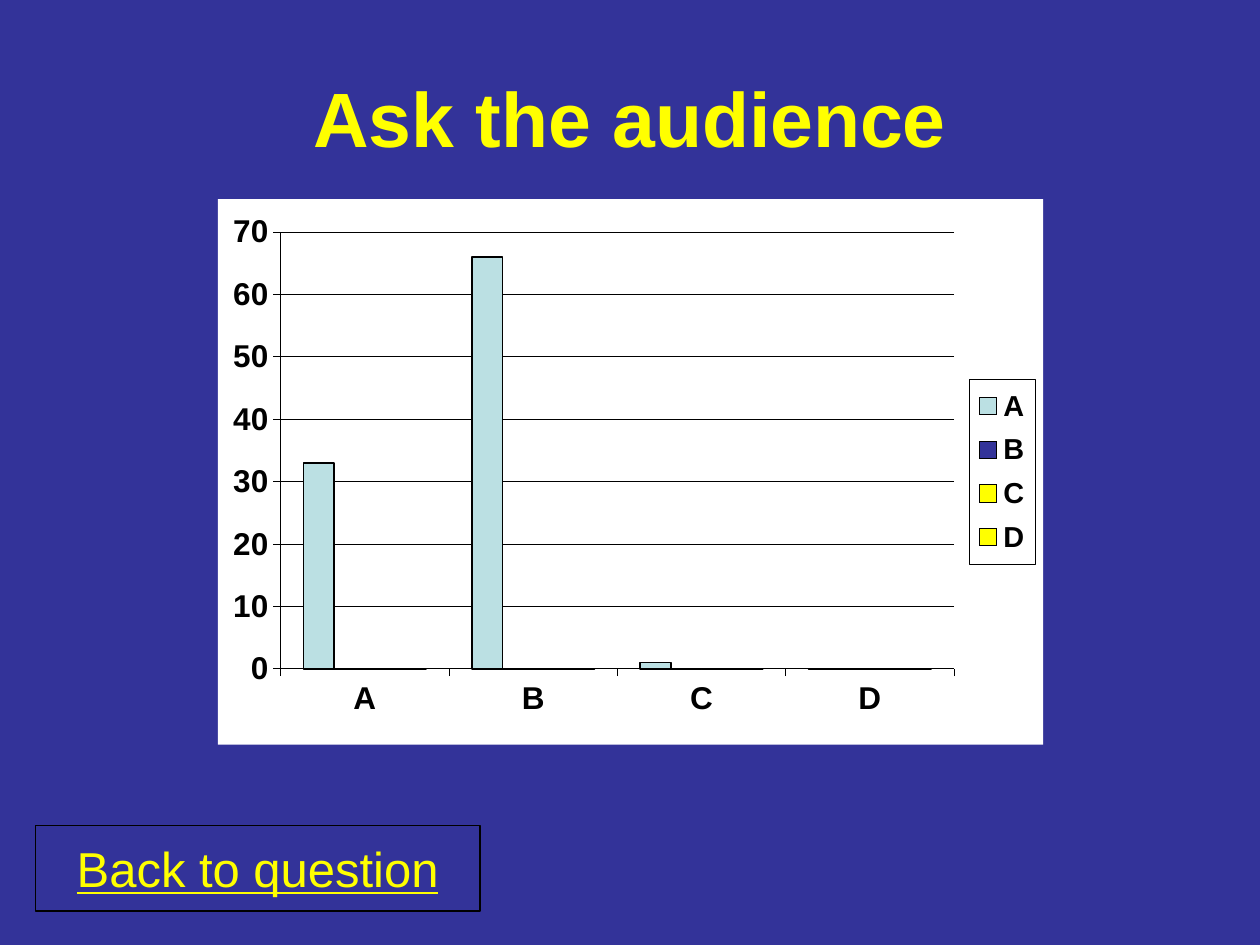
import dataclasses

import pptx
import pptx.chart.axis
import pptx.chart.chart
import pptx.chart.data
import pptx.dml.color
import pptx.enum.chart
import pptx.enum.shapes
import pptx.enum.text
import pptx.oxml
import pptx.oxml.ns
import pptx.slide
import pptx.util
from pptx.util import Inches

COLORS = {
    "background": "333399",
    "accent": "FFFF00",
    "ink": "000000",
    "panel": "FFFFFF",
    "pale": "BBE0E3",
}
FONT = "Arial"
CATEGORIES = ("A", "B", "C", "D")


@dataclasses.dataclass(frozen=True)
class Label:
    text: str
    left: float
    top: float
    width: float
    height: float
    size: float
    bold: bool = False
    underline: bool = False
    outlined: bool = False
    wrap: bool = True


@dataclasses.dataclass(frozen=True)
class Series:
    name: str
    values: tuple[int, ...]
    color: str


LABELS = (
    Label("Ask the audience", 0.5, 0.3, 9, 1.25, 44, bold=True),
    Label("Back to question", 0.28, 6.55, 3.53, 0.68, 28,
          underline=True, outlined=True, wrap=False),
)
SERIES = (
    Series("A", (33, 66, 1, 0), "pale"),
    Series("B", (0, 0, 0, 0), "background"),
    Series("C", (0, 0, 0, 0), "accent"),
    Series("D", (0, 0, 0, 0), "accent"),
)


def rgb(name: str) -> pptx.dml.color.RGBColor:
    return pptx.dml.color.RGBColor.from_string(COLORS[name])


def set_font(font, size: float, color: str, bold: bool = True) -> None:
    font.name = FONT
    font.size = pptx.util.Pt(size)
    font.bold = bold
    font.color.rgb = rgb(color)


def set_line(line, width: float) -> None:
    line.color.rgb = rgb("ink")
    line.width = pptx.util.Pt(width)


def add_label(slide: pptx.slide.Slide, label: Label) -> None:
    box = tuple(map(Inches, (label.left, label.top, label.width, label.height)))
    if label.outlined:
        shape = slide.shapes.add_shape(pptx.enum.shapes.MSO_SHAPE.RECTANGLE, *box)
        shape.shadow.inherit = False
        shape.fill.background()
        set_line(shape.line, 0.75)
    else:
        shape = slide.shapes.add_textbox(*box)
    text_frame = shape.text_frame
    text_frame.text = label.text
    text_frame.word_wrap = label.wrap
    text_frame.vertical_anchor = pptx.enum.text.MSO_ANCHOR.MIDDLE
    paragraph = text_frame.paragraphs[0]
    paragraph.alignment = pptx.enum.text.PP_ALIGN.CENTER
    font = paragraph.runs[0].font
    set_font(font, label.size, "accent", label.bold)
    font.underline = label.underline


def chart_layout(x: float, y: float, width: float, height: float, inner: bool = False):
    target = '<c:layoutTarget val="inner"/>' if inner else ""
    return pptx.oxml.parse_xml(
        f'<c:layout {pptx.oxml.ns.nsdecls("c")}><c:manualLayout>{target}'
        '<c:xMode val="edge"/><c:yMode val="edge"/>'
        f'<c:x val="{x}"/><c:y val="{y}"/><c:w val="{width}"/><c:h val="{height}"/>'
        "</c:manualLayout></c:layout>"
    )


def place_part(part, index: int, layout) -> None:
    for old_layout in part.findall(pptx.oxml.ns.qn("c:layout")):
        part.remove(old_layout)
    part.insert(index, layout)


def panel_properties(line: str):
    return pptx.oxml.parse_xml(
        f'<c:spPr {pptx.oxml.ns.nsdecls("c", "a")}><a:solidFill>'
        f'<a:srgbClr val="{COLORS["panel"]}"/></a:solidFill>{line}</c:spPr>'
    )


def style_axis(axis: pptx.chart.axis._BaseAxis) -> None:
    axis.major_tick_mark = pptx.enum.chart.XL_TICK_MARK.OUTSIDE
    axis.minor_tick_mark = pptx.enum.chart.XL_TICK_MARK.NONE
    set_font(axis.tick_labels.font, 18, "ink")
    set_line(axis.format.line, 0.25)


def style_legend(chart: pptx.chart.chart.Chart) -> None:
    chart.has_legend = True
    legend = chart.legend
    legend.position = pptx.enum.chart.XL_LEGEND_POSITION.RIGHT
    legend.include_in_layout = False
    set_font(legend.font, 16.5, "ink")
    element = legend._element
    place_part(element, 1, chart_layout(0.91, 0.33, 0.08, 0.34))
    outline = (f'<a:ln w="{pptx.util.Pt(0.25)}"><a:solidFill>'
               f'<a:srgbClr val="{COLORS["ink"]}"/></a:solidFill></a:ln>')
    element.find(pptx.oxml.ns.qn("c:txPr")).addprevious(panel_properties(outline))


def add_audience_chart(slide: pptx.slide.Slide) -> None:
    data = pptx.chart.data.CategoryChartData()
    data.categories = CATEGORIES
    for series in SERIES:
        data.add_series(series.name, series.values)
    chart = slide.shapes.add_chart(
        pptx.enum.chart.XL_CHART_TYPE.COLUMN_CLUSTERED,
        Inches(1.73), Inches(1.58), Inches(6.55), Inches(4.33), data,
    ).chart
    chart.has_title = False
    set_font(chart.font, 18, "ink")
    space = chart._chartSpace
    space.find(pptx.oxml.ns.qn("c:txPr")).addprevious(
        panel_properties("<a:ln><a:noFill/></a:ln>"))
    plot_area = space.chart.plotArea
    place_part(plot_area, 0, chart_layout(0.076, 0.06, 0.816, 0.801, inner=True))

    plot = chart.plots[0]
    plot.gap_width = 150
    plot.overlap = 0
    plot.vary_by_categories = False
    for series, drawn in zip(SERIES, plot.series):
        drawn.format.fill.solid()
        drawn.format.fill.fore_color.rgb = rgb(series.color)
        set_line(drawn.format.line, 1)

    style_axis(chart.category_axis)
    chart.category_axis.tick_label_position = pptx.enum.chart.XL_TICK_LABEL_POSITION.LOW
    value_axis = chart.value_axis
    style_axis(value_axis)
    value_axis.minimum_scale = 0
    value_axis.maximum_scale = 70
    value_axis.major_unit = 10
    value_axis.has_major_gridlines = True
    set_line(value_axis.major_gridlines.format.line, 0.25)
    style_legend(chart)


def main() -> None:
    """Build the audience poll slide and save it."""
    presentation = pptx.Presentation()
    presentation.slide_width = Inches(10)
    presentation.slide_height = Inches(7.5)
    slide = presentation.slides.add_slide(presentation.slide_layouts[6])
    slide.background.fill.solid()
    slide.background.fill.fore_color.rgb = rgb("background")
    title, back_button = LABELS
    add_label(slide, title)
    add_audience_chart(slide)
    add_label(slide, back_button)
    presentation.save("out.pptx")


if __name__ == "__main__":
    main()
